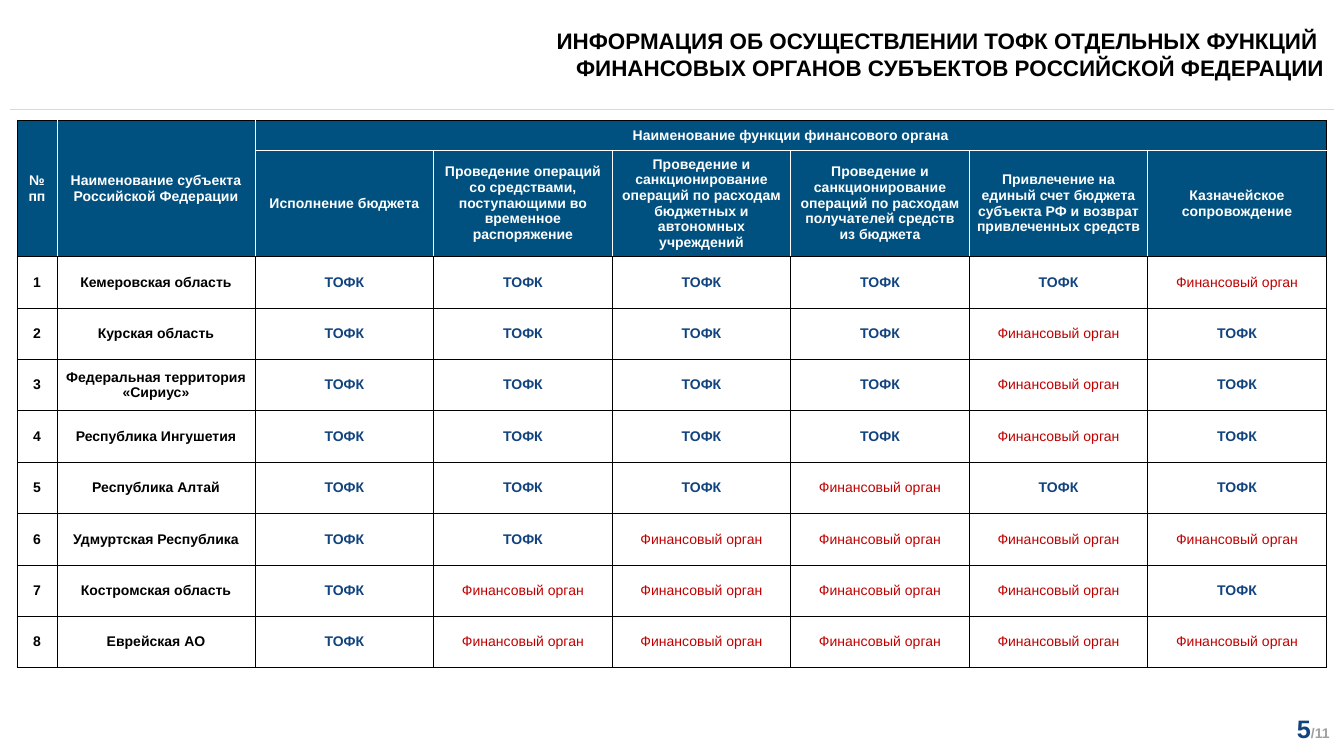
from dataclasses import dataclass

from lxml import etree
from pptx import Presentation
from pptx.dml.color import RGBColor
from pptx.enum.shapes import MSO_CONNECTOR
from pptx.enum.text import MSO_ANCHOR, MSO_AUTO_SIZE, PP_ALIGN
from pptx.oxml.ns import qn
from pptx.util import Inches, Pt

LINE = MSO_CONNECTOR.STRAIGHT
MIDDLE = MSO_ANCHOR.MIDDLE
FIXED = MSO_AUTO_SIZE.NONE
CENTER, RIGHT = PP_ALIGN.CENTER, PP_ALIGN.RIGHT


@dataclass(frozen=True)
class Theme:
    """Colours, font and type sizes of the deck."""
    font: str = "Arial"
    white: str = "FFFFFF"
    black: str = "000000"
    head: str = "005180"
    navy: str = "11437F"
    red: str = "C00000"
    gray: str = "A0A0A0"
    rule: str = "D9D9D9"
    title: int = 32
    page: int = 36
    cell: int = 20


T = Theme()
WIDE, HIGH = Inches(26.67), Inches(15)
COLS = [2, 10] + [9] * 6
ROWS = [0.59, 2.11] + [1.02] * 8
TITLE = ["ИНФОРМАЦИЯ ОБ ОСУЩЕСТВЛЕНИИ ТОФК ОТДЕЛЬНЫХ ФУНКЦИЙ ",
         "ФИНАНСОВЫХ ОРГАНОВ СУБЪЕКТОВ РОССИЙСКОЙ ФЕДЕРАЦИИ"]
TOP = ["№ пп", "Наименование субъекта Российской Федерации",
       "Наименование функции финансового органа"]
TASKS = [
    "Исполнение бюджета",
    "Проведение операций со средствами, поступающими во временное распоряжение",
    "Проведение и санкционирование операций по расходам бюджетных и автономных учреждений",
    "Проведение и санкционирование операций по расходам получателей средств из бюджета",
    "Привлечение на единый счет бюджета субъекта РФ и возврат привлеченных средств",
    "Казначейское сопровождение",
]
STATES = {"Т": ("ТОФК", T.navy, True), "Ф": ("Финансовый орган", T.red, False)}
REGIONS = [
    ("Кемеровская область", "ТТТТТФ"),
    ("Курская область", "ТТТТФТ"),
    ("Федеральная территория «Сириус»", "ТТТТФТ"),
    ("Республика Ингушетия", "ТТТТФТ"),
    ("Республика Алтай", "ТТТФТТ"),
    ("Удмуртская Республика", "ТТФФФФ"),
    ("Костромская область", "ТФФФФТ"),
    ("Еврейская АО", "ТФФФФФ"),
]


def share(x, y, w, h):
    """Turn shares of the slide into a box of lengths."""
    return int(x * WIDE), int(y * HIGH), int(w * WIDE), int(h * HIGH)


def add_run(para, text, size, color, bold=True):
    """Add one formatted run to a paragraph."""
    run = para.add_run()
    run.text = text
    run.font.name, run.font.size, run.font.bold = T.font, Pt(size), bold
    run.font.color.rgb = RGBColor.from_string(color)


def add_title(slide, box):
    """Place the two-line heading in the title placeholder."""
    shape = slide.shapes.title
    shape.left, shape.top, shape.width, shape.height = box
    frame = shape.text_frame
    frame.auto_size, frame.word_wrap = FIXED, True
    frame.vertical_anchor = MIDDLE
    frame.margin_left = frame.margin_top = frame.margin_bottom = 0
    frame.margin_right = Inches(0.39)
    para = frame.paragraphs[0]
    para.alignment = RIGHT
    add_run(para, TITLE[0], T.title, T.black)
    para.add_line_break()
    add_run(para, TITLE[1], T.title, T.black)


def add_rule(slide, box):
    """Draw the thin line under the heading."""
    x, y, w, h = box
    rule = slide.shapes.add_connector(LINE, x, y, x + w, y + h)
    rule.line.color.rgb = RGBColor.from_string(T.rule)
    rule.line.width = Pt(1)
    etree.SubElement(rule._element.spPr, qn("a:effectLst"))


def add_page(slide, box):
    """Place the page number and the page count."""
    frame = slide.shapes.add_textbox(*box).text_frame
    frame.word_wrap = True
    para = frame.paragraphs[0]
    para.alignment = RIGHT
    add_run(para, "5", T.page, T.navy)
    add_run(para, "/11", T.cell, T.gray)


def set_edge(cell, side, color):
    """Give one side of a cell a solid line."""
    props = cell._tc.get_or_add_tcPr()
    edge = etree.SubElement(props, qn(f"a:ln{side}"), w=str(Pt(1)))
    fill = etree.SubElement(edge, qn("a:solidFill"))
    etree.SubElement(fill, qn("a:srgbClr"), val=color)


def style_cell(cell, row, col):
    """Set the edges and the fill of a cell by its place."""
    head = row < 2
    inner = {
        "L": head and col > 0,
        "R": head and col + cell.span_width < len(COLS),
        "T": row == 1,
        "B": row + cell.span_height < 2,
    }
    for side, light in inner.items():
        set_edge(cell, side, T.white if light else T.black)
    if head:
        cell.fill.solid()
        cell.fill.fore_color.rgb = RGBColor.from_string(T.head)
    else:
        cell.fill.background()


def fill_cell(cell, text, color, bold=True):
    """Write centred text into a cell."""
    cell.vertical_anchor = MIDDLE
    para = cell.text_frame.paragraphs[0]
    para.alignment = CENTER
    add_run(para, text, T.cell, color, bold)


def add_grid(slide, box):
    """Build the table of regions and functions."""
    width, height = box[2:]
    table = slide.shapes.add_table(len(ROWS), len(COLS), *box).table
    table.first_row = table.horz_banding = False
    for col, part in zip(table.columns, COLS):
        col.width = int(width * part / sum(COLS))
    for row, part in zip(table.rows, ROWS):
        row.height = int(height * part / sum(ROWS))
    for first, last in [((0, 0), (1, 0)), ((0, 1), (1, 1)), ((0, 2), (0, 7))]:
        table.cell(*first).merge(table.cell(*last))
    for row in range(len(ROWS)):
        for col in range(len(COLS)):
            style_cell(table.cell(row, col), row, col)
    for col, text in enumerate(TOP):
        fill_cell(table.cell(0, col), text, T.white)
    for col, text in enumerate(TASKS, 2):
        fill_cell(table.cell(1, col), text, T.white)
    for num, (name, marks) in enumerate(REGIONS, 1):
        fill_cell(table.cell(num + 1, 0), str(num), T.black)
        fill_cell(table.cell(num + 1, 1), name, T.black)
        for col, mark in enumerate(marks, 2):
            fill_cell(table.cell(num + 1, col), *STATES[mark])


def main():
    """Build the slide and save it."""
    deck = Presentation()
    deck.slide_width, deck.slide_height = WIDE, HIGH
    slide = deck.slides.add_slide(deck.slide_layouts[5])
    add_rule(slide, share(0.0075, 0.145, 0.985, 0))
    add_page(slide, share(0.922, 0.94, 0.071, 0.047))
    add_grid(slide, (Inches(0.34), Inches(2.39), Inches(25.98), Inches(10.86)))
    add_title(slide, share(0, 0, 1, 0.143))
    deck.save("out.pptx")


if __name__ == "__main__":
    main()
